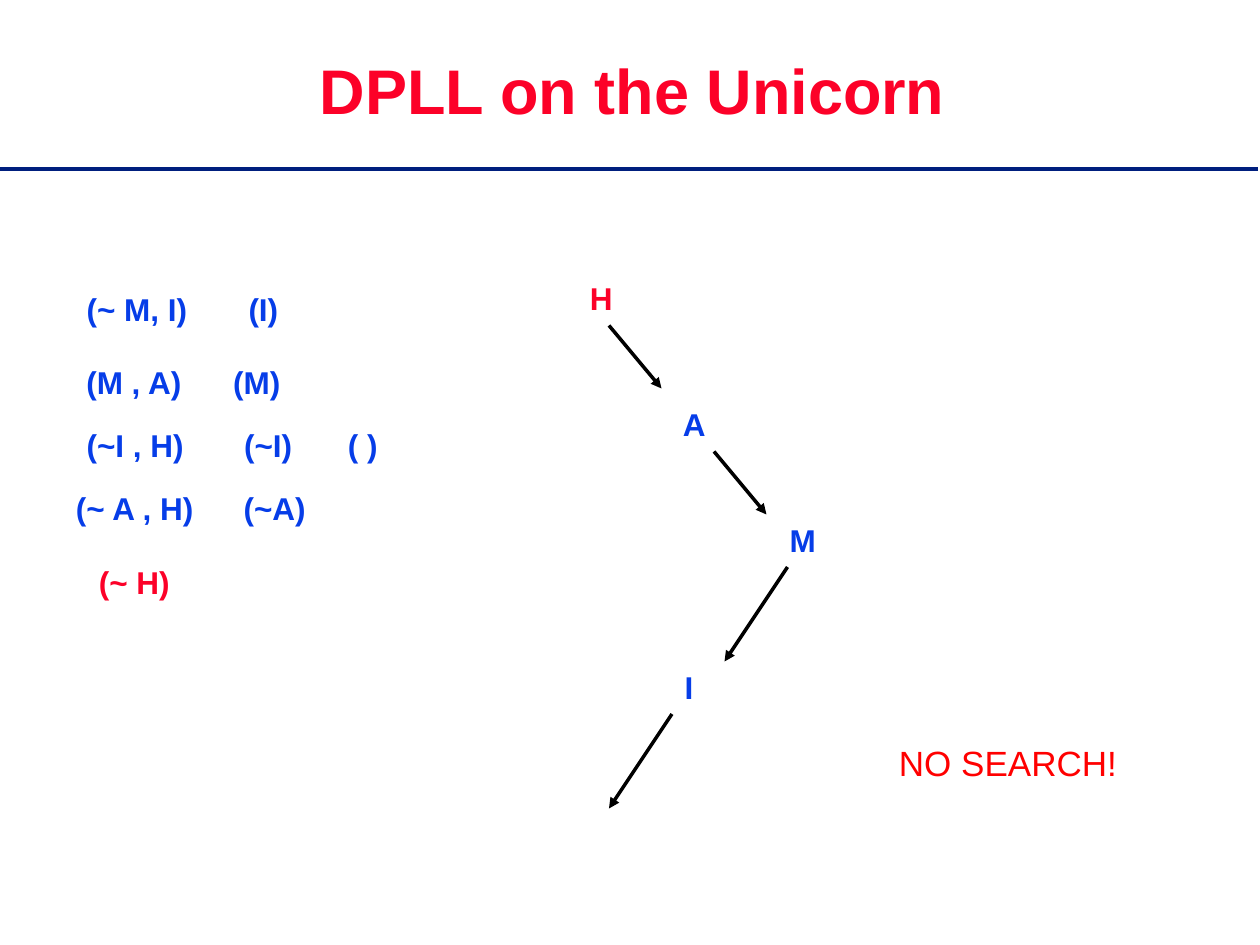
from lxml.etree import SubElement
from pptx import Presentation
from pptx.dml.color import RGBColor
from pptx.enum.shapes import MSO_CONNECTOR as Connector
from pptx.enum.text import MSO_ANCHOR as Anchor, MSO_AUTO_SIZE as AutoSize, PP_ALIGN as Align
from pptx.oxml.ns import qn
from pptx.util import Pt

TITLE = "DPLL on the Unicorn"
RED, BLUE, NAVY, BLACK = "FC0128", "063DE8", "001F7E", "000000"
LABEL_HEIGHT = 29

CLAUSE_ROWS = [
    (162, BLUE, [("(~ M, I)", 42, 72.5), ("(I)", 134.5, 32)]),
    (204, BLUE, [("(M , A)", 42, 69), ("(M)", 126, 41.5)]),
    (240, BLUE, [("(~I , H)", 42, 70.5), ("(~I)", 132, 42.5), ("( )", 191.5, 31.5)]),
    (276, BLUE, [("(~ A , H)", 36, 82), ("(~A)", 132, 50)]),
    (318, RED, [("(~ H)", 48, 57.5)]),
]
TREE_NODES = [
    (156, RED, [("H", 330, 27)]),
    (228, BLUE, [("A", 383, 27.5)]),
    (294, BLUE, [("M", 444, 29.5)]),
    (378, BLUE, [("I", 384, 19.5)]),
]
BRANCHES = [
    ((348, 186), (378, 222)),
    ((408, 258), (438, 294)),
    ((450, 324), (414, 378)),
    ((384, 408), (348, 462)),
]
CONCLUSION = "NO SEARCH!"


def colour(value):
    return RGBColor.from_string(value)


def write(frame, text, size, value, bold):
    frame.text = text
    para = frame.paragraphs[0]
    para.alignment = Align.CENTER
    span = para.runs[0]
    formats = {"name": "Arial", "size": Pt(size), "bold": bold}
    for name, setting in formats.items():
        setattr(span.font, name, setting)
    span.font.color.rgb = colour(value)
    return para, span


def add_label(page, text, left, top, width, height, value, size=18, bold=True, wrap=False):
    box = page.shapes.add_textbox(Pt(left), Pt(top), Pt(width), Pt(height))
    frame = box.text_frame
    write(frame, text, size, value, bold)
    frame.word_wrap = wrap
    frame.auto_size = AutoSize.SHAPE_TO_FIT_TEXT


def add_line(page, start, end, value, arrow=False):
    points = [Pt(length) for length in (*start, *end)]
    connector = page.shapes.add_connector(Connector.STRAIGHT, *points)
    connector.line.color.rgb = colour(value)
    connector.line.width = Pt(2)
    if arrow:
        SubElement(connector.line._get_or_add_ln(), qn("a:tailEnd"), type="triangle")
    SubElement(connector._element.spPr, qn("a:effectLst"))


def add_text_shadow(span):
    effects = SubElement(span.font._element, qn("a:effectLst"))
    shadow = SubElement(effects, qn("a:outerShdw"), blurRad="38100", dist="38100", dir="2700000")
    shade = SubElement(shadow, qn("a:srgbClr"), val=BLACK)
    latin = span.font._element.find(qn("a:latin"))
    latin.addprevious(effects)
    return shade


def format_title(page):
    title = page.shapes.title
    place = {"left": 78.5, "top": 18, "width": 566, "height": 71.5}
    for name, length in place.items():
        setattr(title, name, Pt(length))
    frame = title.text_frame
    para, span = write(frame, TITLE, 36, RED, True)
    para.line_spacing = 0.9
    frame.vertical_anchor = Anchor.MIDDLE
    frame.auto_size = AutoSize.NONE
    add_text_shadow(span)


def main():
    deck = Presentation()
    deck.slide_width, deck.slide_height = Pt(720), Pt(540)
    page = deck.slides.add_slide(deck.slide_layouts[5])
    format_title(page)
    add_line(page, (0, 96.5), (719, 96.5), NAVY)
    for top, value, labels in CLAUSE_ROWS + TREE_NODES:
        for text, left, width in labels:
            add_label(page, text, left, top, width, LABEL_HEIGHT, value)
    for start, end in BRANCHES:
        add_line(page, start, end, BLACK, arrow=True)
    add_label(page, CONCLUSION, 480, 420, 192, 31.5, "FF0000", size=20, bold=False, wrap=True)
    deck.save("out.pptx")


if __name__ == "__main__":
    main()
